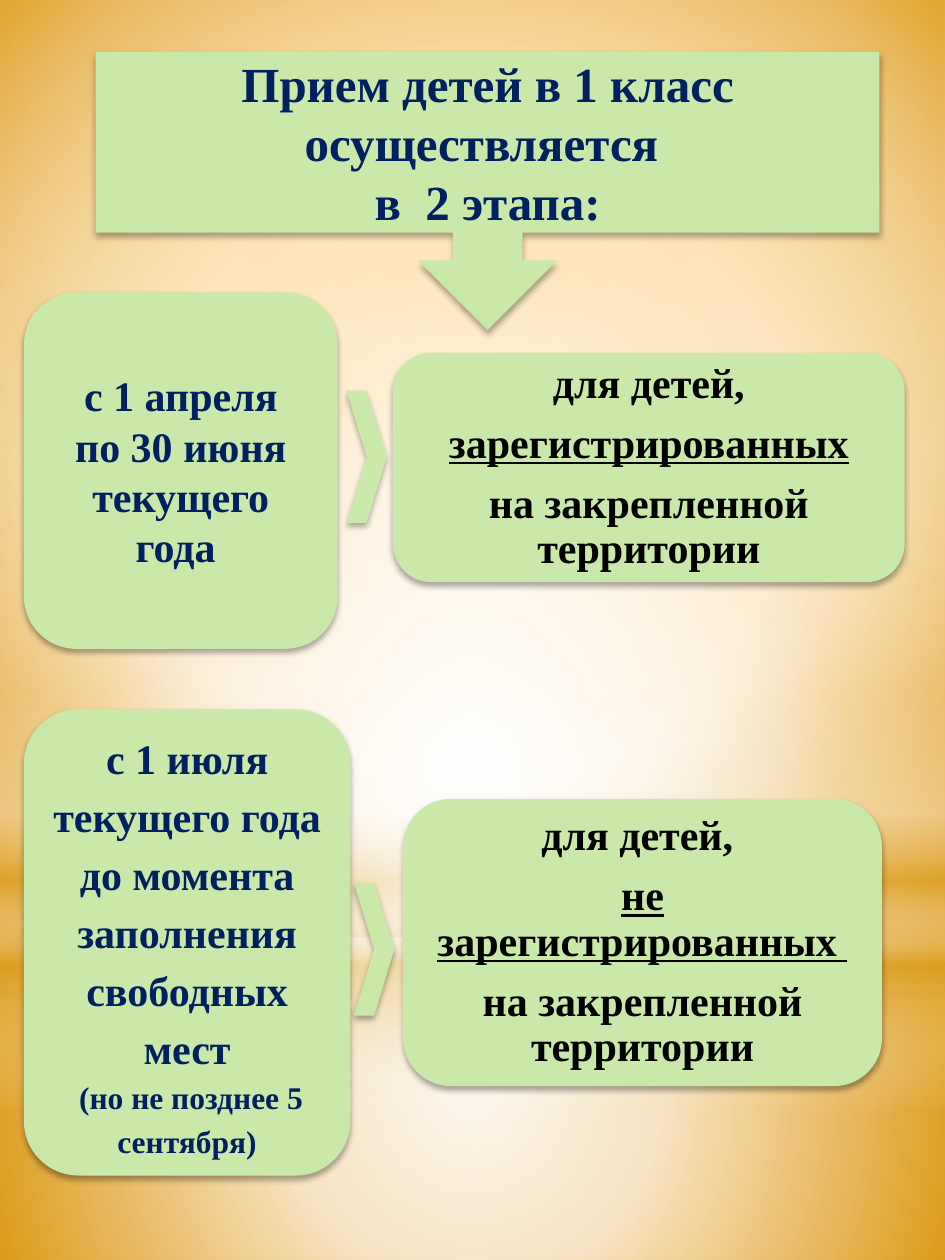
from lxml.etree import SubElement as Sub
from pptx import Presentation
from pptx.dml.color import RGBColor
from pptx.enum.shapes import MSO_SHAPE as Shape
from pptx.enum.text import MSO_ANCHOR as Anchor, PP_ALIGN as Align
from pptx.oxml.ns import qn
from pptx.util import Inches, Pt

COLS, ROWS = 75, 100
WIDTH, HEIGHT = Inches(7.5), Inches(10)
GREEN, NAVY, BLACK = "CAE8AA", "002060", "000000"
GOLD, WHITE = "DC9E1F", "FFFFFF"
CENTER = (50, 50, 50, 50)
FONT = {"name": "Times New Roman", "bold": True}
DATES = {"line_spacing": 1.15}
GROUPS = {"line_spacing": 0.9, "space_after": Pt(8.4)}


def tint(color, code):
    color.rgb = RGBColor.from_string(code)


def put(item, values):
    for name, value in values.items():
        setattr(item, name, value)


def add_shape(slide, kind, box):
    """Place a bare shape; box is left, top, width, height in columns and rows."""
    x, y, w, h = box
    col, row = WIDTH / COLS, HEIGHT / ROWS
    shape = slide.shapes.add_shape(
        kind, round(x * col), round(y * row), round(w * col), round(h * row))
    shape.shadow.inherit = False
    shape.line.fill.background()
    return shape


def add_color(parent, code, alpha):
    color = Sub(parent, qn("a:srgbClr"), val=code)
    if alpha < 100:
        Sub(color, qn("a:alpha"), val=str(alpha * 1000))


def blend(fill, props, stops, focus=None):
    """Fill with (place, colour, opacity) stops: round a focus, or downwards."""
    fill.gradient()
    grad = props.find(qn("a:gradFill"))
    for child in list(grad):
        grad.remove(child)
    marks = Sub(grad, qn("a:gsLst"))
    for place, code, alpha in stops:
        add_color(Sub(marks, qn("a:gs"), pos=str(place * 1000)), code, alpha)
    if focus:
        ring = Sub(grad, qn("a:path"), path="circle")
        sides = {side: str(n * 1000) for side, n in zip("ltrb", focus)}
        Sub(ring, qn("a:fillToRect"), **sides)
    else:
        Sub(grad, qn("a:lin"), ang="5400000", scaled="0")


def add_glow(slide, kind, box, stops, focus=None):
    shape = add_shape(slide, kind, box)
    blend(shape.fill, shape._element.spPr, stops, focus)


def add_block(slide, kind, box):
    """Add a green shape with a soft shadow below."""
    shape = add_shape(slide, kind, box)
    shape.fill.solid()
    tint(shape.fill.fore_color, GREEN)
    effects = shape._element.spPr.find(qn("a:effectLst"))
    shade = Sub(effects, qn("a:outerShdw"), blurRad=str(Pt(3.5)),
                dist=str(Pt(2.2)), dir="5400000", rotWithShape="0")
    add_color(shade, BLACK, 32)
    return shape


def add_card(slide, kind, box, lines, color, form):
    """Add a block with text; a line is its wording and its own font values."""
    frame = add_block(slide, kind, box).text_frame
    put(frame, {"word_wrap": True, "vertical_anchor": Anchor.MIDDLE})
    for i, (words, style) in enumerate(lines):
        para = frame.add_paragraph() if i else frame.paragraphs[0]
        put(para, {"alignment": Align.CENTER, **form})
        run = para.add_run()
        run.text = words
        put(run.font, {**FONT, "size": Pt(24), **style})
        tint(run.font.color, color)


def add_backdrop(slide):
    fill = slide.background.fill
    fill.solid()
    blend(fill, slide._element.find(".//" + qn("p:bgPr")),
          [(0, "FFA607", 100), (60, "F9CD88", 100), (100, "E08E02", 100)],
          (20, 10, 20, 60))
    add_glow(slide, Shape.RECTANGLE, (0, 74.4, COLS, 25.6),
             [(0, WHITE, 91), (37, WHITE, 76), (100, GOLD, 79)], CENTER)
    add_glow(slide, Shape.RECTANGLE, (0, 0, COLS, 74.4),
             [(0, WHITE, 89), (48, WHITE, 62), (100, GOLD, 79)], CENTER)
    add_glow(slide, Shape.RECTANGLE, (0, 54.9, COLS, 33.3),
             [(0, WHITE, 0), (29, WHITE, 30), (45, GOLD, 40),
              (55, WHITE, 26), (65, GOLD, 60), (100, WHITE, 0)])
    add_glow(slide, Shape.OVAL, (0, 23.3, COLS, 74.4),
             [(0, WHITE, 100), (56, WHITE, 0)], CENTER)


def main():
    deck = Presentation()
    put(deck, {"slide_width": WIDTH, "slide_height": HEIGHT})
    slide = deck.slides.add_slide(deck.slide_layouts[6])
    add_backdrop(slide)

    card = Shape.ROUNDED_RECTANGLE
    under = {"underline": True}
    land = ("на закрепленной территории", {})
    add_card(slide, card, (31.2, 28, 40.6, 18.2), [
        ("для детей,", {}), ("зарегистрированных", under), land], BLACK, GROUPS)
    add_card(slide, card, (32, 63.4, 38, 22.8), [
        ("для детей, ", {}), ("не зарегистрированных ", under), land],
        BLACK, GROUPS)
    add_card(slide, card, (1.9, 23.2, 24.9, 28.3), [
        ("с 1 апреля", {}), ("по 30 июня", {}), ("текущего года ", {})],
        NAVY, {})
    add_card(slide, card, (1.9, 56.3, 25.9, 37), [
        ("с 1 июля текущего года ", {}),
        ("до момента заполнения свободных мест", {}),
        (" (но не позднее 5 сентября)", {"size": Pt(18)})], NAVY, DATES)

    big = {"size": Pt(28)}
    add_card(slide, Shape.DOWN_ARROW_CALLOUT, (7.6, 4.1, 62.2, 22.1), [
        ("Прием детей в 1 класс осуществляется ", big),
        ("в  2 этапа:", big)], NAVY, {})
    for x, y in ((27.5, 31), (28.1, 70.1)):
        add_block(slide, Shape.CHEVRON, (x, y, 3.2, 10.5))

    deck.save("out.pptx")


if __name__ == "__main__":
    main()
